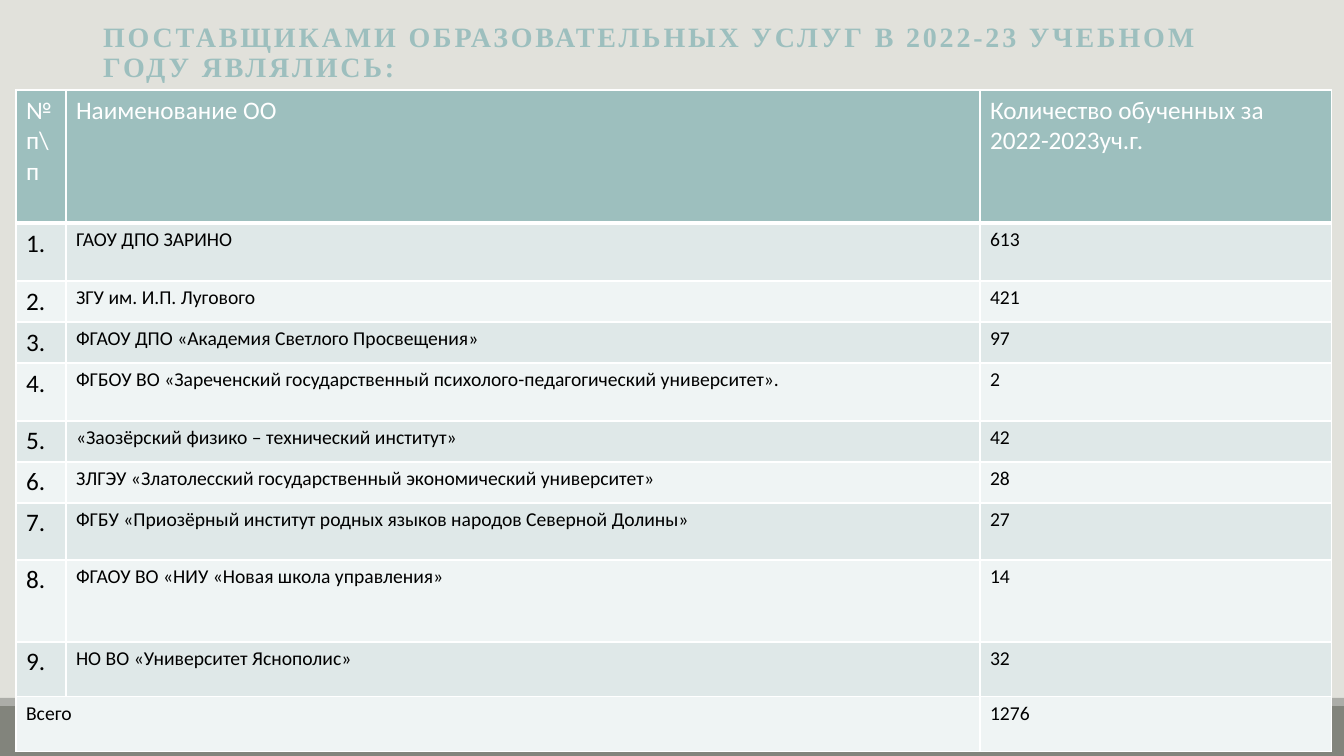
from lxml.etree import SubElement
from pptx import Presentation
from pptx.dml.color import RGBColor
from pptx.enum.shapes import MSO_SHAPE
from pptx.enum.text import MSO_ANCHOR, MSO_AUTO_SIZE, PP_ALIGN
from pptx.oxml import parse_xml
from pptx.oxml.ns import nsdecls
from pptx.util import Emu, Pt

WIDE, HIGH = 1344, 756
SCALE = 12192000 / WIDE


def px(*sizes):
    return [Emu(round(size * SCALE)) for size in sizes]


def paint(fill, color):
    fill.solid()
    fill.fore_color.rgb = RGBColor.from_string(color)


deck = Presentation()
deck.slide_width, deck.slide_height = px(WIDE, HIGH)
slide = deck.slides.add_slide(deck.slide_layouts[5])
paint(slide.background.fill, "E1E1DB")

# Bottom strips
for top, high, color in [(706, 50, "82847C"), (698, 8, "ACADA8")]:
    strip = slide.shapes.add_shape(MSO_SHAPE.RECTANGLE, *px(0, top, WIDE, high))
    strip.shadow.inherit = False
    paint(strip.fill, color)
    strip.line.fill.background()

# Title
title = slide.shapes.title
title.left, title.top, title.width, title.height = px(93, 18, 1142, 87)
frame = title.text_frame
frame.word_wrap = True
frame.auto_size = MSO_AUTO_SIZE.NONE
frame.vertical_anchor = MSO_ANCHOR.TOP
para = frame.paragraphs[0]
para.alignment = PP_ALIGN.LEFT
para.line_spacing = 0.9
para.space_before, para.space_after = Pt(12), Pt(2)
run = para.add_run()
run.text = "ПОСТАВЩИКАМИ ОБРАЗОВАТЕЛЬНЫХ УСЛУГ В 2022-23 УЧЕБНОМ ГОДУ ЯВЛЯЛИСЬ:"
run.font.name, run.font.size, run.font.bold = "Times New Roman", Pt(20), True
run.font.color.rgb = RGBColor.from_string("9DBFBE")
run.font._element.set("spc", "200")

# Table of providers
firms = [
    ("ГАОУ ДПО ЗАРИНО", 613),
    ("ЗГУ им. И.П. Лугового", 421),
    ("ФГАОУ ДПО «Академия Светлого Просвещения»", 97),
    ("ФГБОУ ВО «Зареченский государственный психолого-педагогический университет».", 2),
    ("«Заозёрский физико – технический институт»", 42),
    ("ЗЛГЭУ «Златолесский государственный экономический университет»", 28),
    ("ФГБУ «Приозёрный институт родных языков народов Северной Долины»", 27),
    ("ФГАОУ ВО «НИУ «Новая школа управления»", 14),
    ("НО ВО «Университет Яснополис»", 32),
]
rows = [("№ п\\п", "Наименование ОО", "Количество обученных за\n2022-2023уч.г.")]
rows += [(f"{n}.", name, str(count)) for n, (name, count) in enumerate(firms, 1)]
rows.append(("Всего", "", str(sum(count for name, count in firms))))
wides = [50, 914, 352]
highs = [133, 58, 41, 41, 58, 41, 41, 57, 82, 55, 55]
last = len(rows) - 1

table = slide.shapes.add_table(
    len(rows), len(wides), *px(16, 90, sum(wides), sum(highs))).table
for col, wide in zip(table.columns, px(*wides)):
    col.width = wide
for row, high in zip(table.rows, px(*highs)):
    row.height = high
table.cell(last, 0).merge(table.cell(last, 1))

for r, texts in enumerate(rows):
    head = r == 0
    back = "9DBFBE" if head else "DFE8E8" if r % 2 else "EFF4F4"
    for c, text in enumerate(texts):
        cell = table.cell(r, c)
        paint(cell.fill, back)
        props = cell._tc.get_or_add_tcPr()
        for i, side in enumerate("LRTB"):
            thick = 3 if (head and side == "B") or (r == 1 and side == "T") else 1
            edge = parse_xml(f'<a:ln{side} {nsdecls("a")} w="{Pt(thick)}"/>')
            tint = SubElement(edge, edge.tag.replace(f"ln{side}", "solidFill"))
            SubElement(tint, tint.tag.replace("solidFill", "srgbClr"), val="FFFFFF")
            props.insert(i, edge)
        if cell.is_spanned:
            continue
        big = head or (c == 0 and r < last)
        for i, line in enumerate(text.split("\n")):
            body = cell.text_frame
            para = body.add_paragraph() if i else body.paragraphs[0]
            run = para.add_run()
            run.text = line
            run.font.name, run.font.bold = "Calibri", False
            run.font.size = Pt(18 if big else 14)
            run.font.color.rgb = RGBColor.from_string("FFFFFF" if head else "000000")

deck.save("out.pptx")
